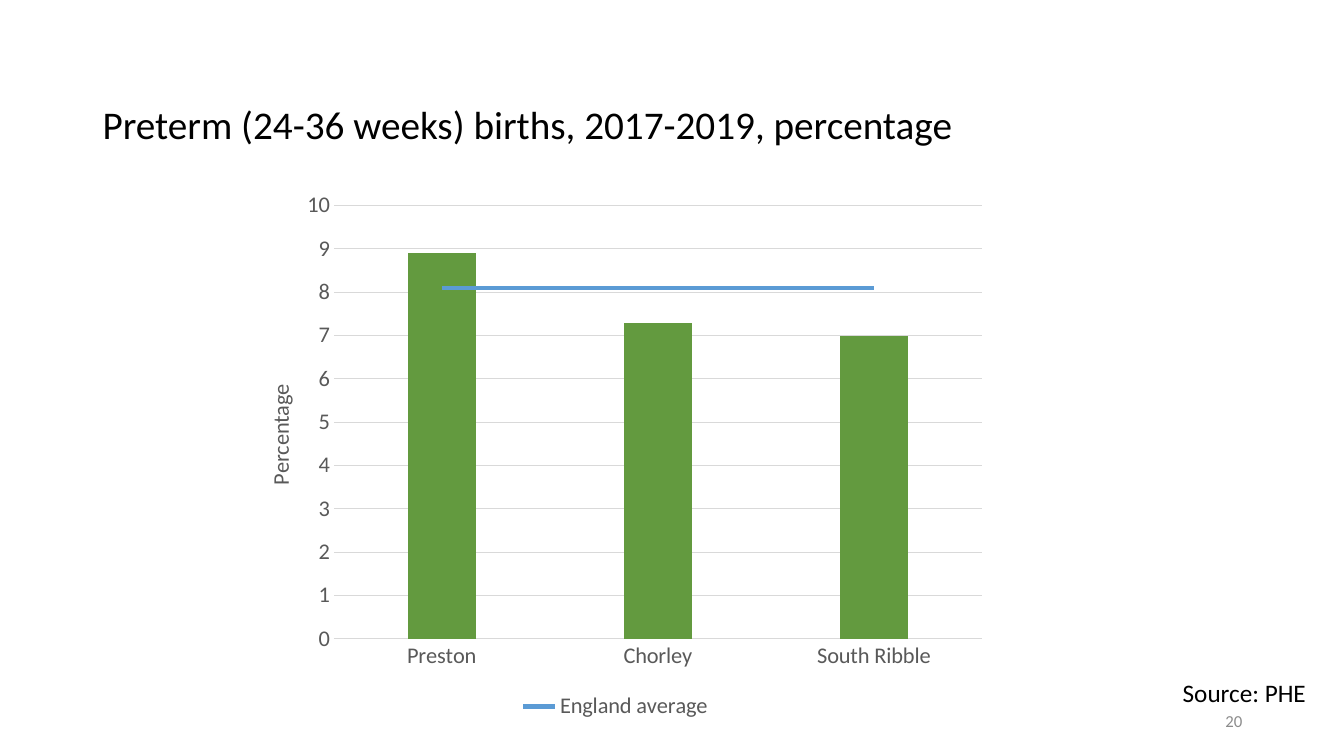
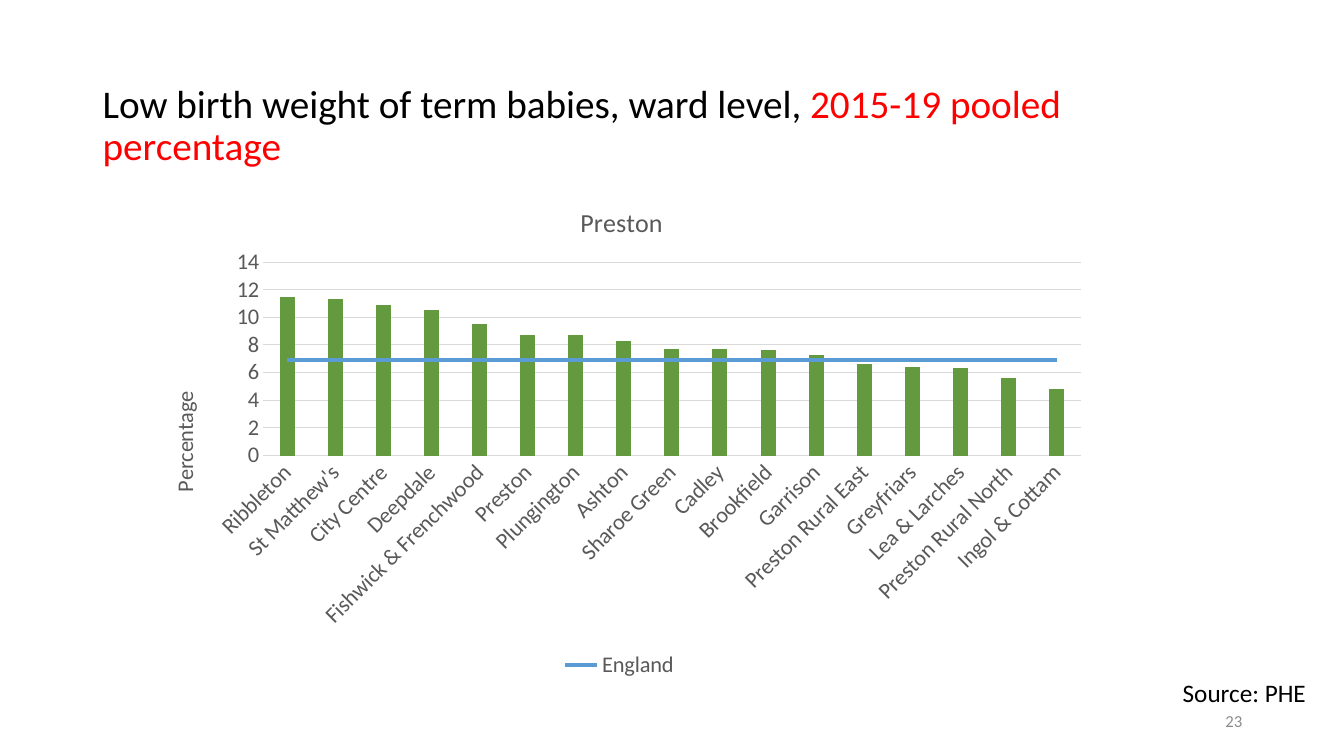
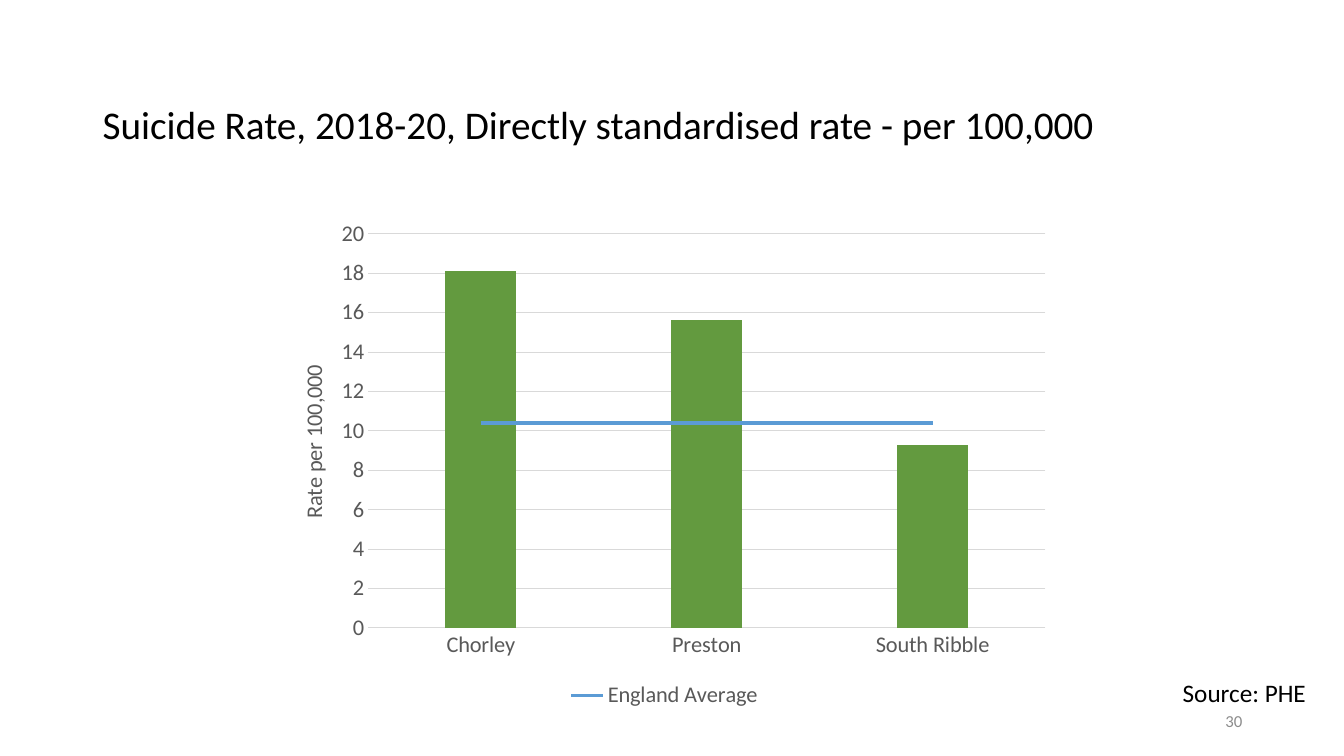
from lxml import etree
from pptx import Presentation
from pptx.chart.data import CategoryChartData
from pptx.dml.color import RGBColor
from pptx.enum import chart as ch, text
from pptx.oxml import ns
from pptx.util import Inches, Pt

FONT = "Calibri"
BLACK, RED, GREY = "000000", "FF0000", "8C8C8C"
LABEL, GRID, BAR, LINE = "595959", "D9D9D9", "639A3F", "5B9BD5"
TITLE_BOX = (0.92, 0.72, 11.5, 1.08)
NUMBER_BOX = (9.42, 6.95, 3, 0.4)
SOURCE_BOX = (11.16, 6.67, 1.89, 0.4)
SOURCE = "Source: PHE"

# Content: boxes are left, top, width, height and points are left, top, in inches
SLIDES = [
    dict(
        title=[("Preterm (24-36 weeks) births, 2017-2019, percentage", BLACK)],
        number="20",
        box=(2.32, 1.8, 7.57, 5.39), plot=(3.31, 2.04, 6.43, 4.3),
        axis_title="Percentage", axis_title_at=(2.59, 3.77),
        top=10, step=1, average=("England average", 8.1, 3),
        values={"Preston": 8.9, "Chorley": 7.3, "South Ribble": 7},
    ),
    dict(
        title=[("Low birth weight of term babies, ward level, ", BLACK),
               ("2015-19 pooled percentage", RED)],
        number="23",
        box=(1.37, 1.72, 9.55, 5.06), plot=(2.61, 2.6, 8.11, 1.92),
        axis_title="Percentage", axis_title_at=(1.64, 3.84),
        chart_title="Preston", chart_title_at=(5.71, 1.98),
        top=14, step=2, average=("England", 6.9, 3), label_angle=-45,
        values={
            "Ribbleton": 11.5, "St Matthew's": 11.3, "City Centre": 10.9,
            "Deepdale": 10.5, "Fishwick & Frenchwood": 9.5, "Preston": 8.7,
            "Plungington": 8.7, "Ashton": 8.3, "Sharoe Green": 7.7,
            "Cadley": 7.7, "Brookfield": 7.6, "Garrison": 7.3,
            "Preston Rural East": 6.6, "Greyfriars": 6.4,
            "Lea & Larches": 6.3, "Preston Rural North": 5.6,
            "Ingol & Cottam": 4.8,
        },
    ),
    dict(
        title=[("Suicide Rate, 2018-20, Directly standardised rate - per 100,000", BLACK)],
        number="30",
        box=(2.65, 2.09, 7.88, 4.99), plot=(3.65, 2.32, 6.72, 3.91),
        axis_title="Rate per 100,000", axis_title_at=(2.92, 3.58),
        top=20, step=2, average=("England Average", 10.4, 2.25),
        values={"Chorley": 18.1, "Preston": 15.6, "South Ribble": 9.3},
    ),
]


def rgb(value):
    return RGBColor.from_string(value)


def set_font(font, size, color):
    font.name, font.size, font.bold = FONT, Pt(size), False
    font.color.rgb = rgb(color)


def add_text(slide, box, runs, size, align="LEFT", anchor="TOP", spacing=1.0):
    frame = slide.shapes.add_textbox(*map(Inches, box)).text_frame
    frame.word_wrap = True
    frame.vertical_anchor = getattr(text.MSO_ANCHOR, anchor)
    paragraph = frame.paragraphs[0]
    paragraph.alignment = getattr(text.PP_ALIGN, align)
    paragraph.line_spacing = spacing
    for words, color in runs:
        run = paragraph.add_run()
        run.text = words
        set_font(run.font, size, color)


def child(parent, tag, index=None, **attributes):
    element = etree.Element(ns.qn(tag), **attributes)
    parent.insert(len(parent) if index is None else index, element)
    return element


def place(element, chart_box, target):
    """Fix a chart part at a point or box given in slide inches."""
    for old in element.findall(ns.qn("c:layout")):
        element.remove(old)
    after_text = 0 if element.find(ns.qn("c:tx")) is None else 1
    layout = child(child(element, "c:layout", after_text), "c:manualLayout")
    left, top, width, height = chart_box
    if len(target) == 4:
        child(layout, "c:layoutTarget", val="inner")
    for tag in ("c:xMode", "c:yMode"):
        child(layout, tag, val="edge")
    fractions = [(target[0] - left) / width, (target[1] - top) / height]
    if len(target) == 4:
        fractions += [target[2] / width, target[3] / height]
    for tag, fraction in zip(("c:x", "c:y", "c:w", "c:h"), fractions):
        child(layout, tag, val=f"{fraction:.4f}")


def set_title(title, words, size, chart_box, point):
    title.text_frame.text = words
    set_font(title.text_frame.paragraphs[0].runs[0].font, size, LABEL)
    place(title._element, chart_box, point)


def move_average_to_line(chart):
    """Draw the second series as a line on the same axes."""
    bars = chart._chartSpace.find(".//" + ns.qn("c:barChart"))
    series = bars.findall(ns.qn("c:ser"))[1]
    for bar_setting in series.findall(ns.qn("c:invertIfNegative")):
        series.remove(bar_setting)
    line_chart = bars.makeelement(ns.qn("c:lineChart"))
    bars.addnext(line_chart)
    child(line_chart, "c:grouping", val="standard")
    child(line_chart, "c:varyColors", val="0")
    line_chart.append(series)
    child(line_chart, "c:marker", val="1")
    for axis in bars.findall(ns.qn("c:axId")):
        child(line_chart, "c:axId", val=axis.get("val"))


def add_average_chart(slide, content):
    box = content["box"]
    name, average, width = content["average"]
    data = CategoryChartData()
    data.categories = list(content["values"])
    data.add_series("Series 1", list(content["values"].values()))
    data.add_series(name, [average] * len(content["values"]))
    chart = slide.shapes.add_chart(
        ch.XL_CHART_TYPE.COLUMN_CLUSTERED, *map(Inches, box), data).chart
    set_font(chart.font, 16, BLACK)
    move_average_to_line(chart)

    # Bars and average line
    bars, lines = chart.plots
    bars.gap_width, bars.overlap, bars.vary_by_categories = 219, -27, False
    bars.series[0].format.fill.solid()
    bars.series[0].format.fill.fore_color.rgb = rgb(BAR)
    line = lines.series[0]
    line.smooth = False
    line.marker.style = ch.XL_MARKER_STYLE.NONE
    line.format.line.color.rgb = rgb(LINE)
    line.format.line.width = Pt(width)

    # Axes
    categories, values = chart.category_axis, chart.value_axis
    for axis in (categories, values):
        axis.major_tick_mark = axis.minor_tick_mark = ch.XL_TICK_MARK.NONE
        set_font(axis.tick_labels.font, 16, LABEL)
    values.minimum_scale, values.maximum_scale = 0, content["top"]
    values.major_unit = content["step"]
    values.tick_labels.number_format = "0"
    values.tick_labels.number_format_is_linked = False
    values.format.line.fill.background()
    values.has_major_gridlines = True
    for rule in (categories.format.line, values.major_gridlines.format.line):
        rule.color.rgb = rgb(GRID)
        rule.width = Pt(0.75)
    if "label_angle" in content:
        body = categories._element.find(ns.qn("c:txPr")).find(ns.qn("a:bodyPr"))
        body.set("rot", str(content["label_angle"] * 60000))
        body.set("vert", "horz")

    # Titles
    set_title(values.axis_title, content["axis_title"], 16, box, content["axis_title_at"])
    body = values.axis_title._element.find(".//" + ns.qn("a:bodyPr"))
    body.set("rot", str(-90 * 60000))
    body.set("vert", "horz")
    chart.has_title = "chart_title" in content
    if chart.has_title:
        set_title(chart.chart_title, content["chart_title"], 18.6, box,
                  content["chart_title_at"])

    # Legend without the bars
    chart.has_legend = True
    chart.legend.position = ch.XL_LEGEND_POSITION.BOTTOM
    chart.legend.include_in_layout = False
    set_font(chart.legend.font, 16, LABEL)
    entry = child(chart.legend._element, "c:legendEntry", 1)
    child(entry, "c:idx", val="0")
    child(entry, "c:delete", val="1")
    place(chart._chartSpace.find(".//" + ns.qn("c:plotArea")), box, content["plot"])


def main():
    presentation = Presentation()
    presentation.slide_width, presentation.slide_height = Inches(13.33), Inches(7.5)
    for content in SLIDES:
        slide = presentation.slides.add_slide(presentation.slide_layouts[6])
        add_text(slide, TITLE_BOX, content["title"], 28, anchor="MIDDLE", spacing=0.9)
        add_text(slide, NUMBER_BOX, [(content["number"], GREY)], 12,
                 align="RIGHT", anchor="MIDDLE")
        add_text(slide, SOURCE_BOX, [(SOURCE, BLACK)], 18, align="RIGHT")
        add_average_chart(slide, content)
    presentation.save("out.pptx")


if __name__ == "__main__":
    main()
